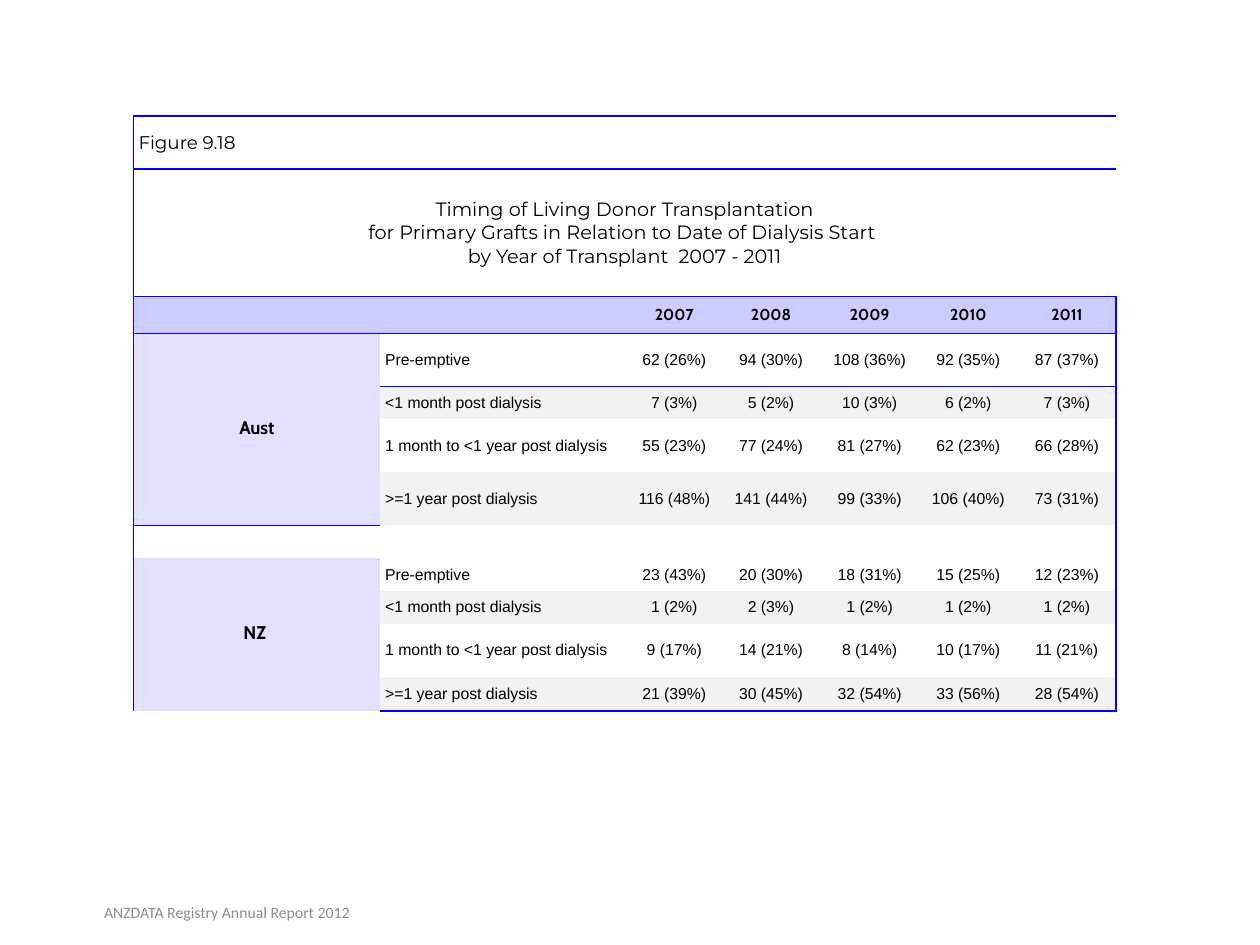
import pptx
import pptx.util
import pptx.dml.color
import pptx.enum.text
import pptx.oxml
import pptx.oxml.ns
import lxml.etree

RGB = pptx.dml.color.RGBColor
BLACK = RGB(0, 0, 0)
GRAY = RGB(0x8C, 0x8C, 0x8C)
BLUE = RGB(0, 0, 0xFF)
HEAD = RGB(0xCC, 0xCC, 0xFF)
SIDE = RGB(0xE1, 0xE1, 0xFF)
BAND = RGB(0xF2, 0xF2, 0xF2)
LEFT = pptx.enum.text.PP_ALIGN.LEFT
MID = pptx.enum.text.PP_ALIGN.CENTER
CENTER = pptx.enum.text.MSO_ANCHOR.MIDDLE
PLAIN = "{2D5ABB26-0587-4C30-8999-92F81FD0307C}"

COLS = [1.95, 1.95, 0.75, 0.78, 0.78, 0.78, 0.78]
ROWS = [0.42, 1.01, 0.29, 0.42, 0.26, 0.42, 0.42, 0.26, 0.26, 0.26, 0.42, 0.27]
YEARS = ["2007", "2008", "2009", "2010", "2011"]
TITLE = [
    "Timing of Living Donor Transplantation",
    "for Primary Grafts in Relation to Date of Dialysis Start ",
    "by Year of Transplant  2007 - 2011",
]
TIMES = [
    "Pre-emptive",
    "<1 month post dialysis",
    "1 month to <1 year post dialysis",
    ">=1 year post dialysis",
]
GROUPS = [
    ("Aust", 3, [
        ["62 (26%)", "94 (30%)", "108 (36%)", "92 (35%)", "87 (37%)"],
        ["7 (3%)", "5 (2%)", "10 (3%)", "6 (2%)", "7 (3%)"],
        ["55 (23%)", "77 (24%)", "81 (27%)", "62 (23%)", "66 (28%)"],
        ["116 (48%)", "141 (44%)", "99 (33%)", "106 (40%)", "73 (31%)"],
    ]),
    ("NZ ", 8, [
        ["23 (43%)", "20 (30%)", "18 (31%)", "15 (25%)", "12 (23%)"],
        ["1 (2%)", "2 (3%)", "1 (2%)", "1 (2%)", "1 (2%)"],
        ["9 (17%)", "14 (21%)", "8 (14%)", "10 (17%)", "11 (21%)"],
        ["21 (39%)", "30 (45%)", "32 (54%)", "33 (56%)", "28 (54%)"],
    ]),
]


def write(frame, lines, size=9, font="Arial", color=BLACK, bold=False,
          align=MID, after=None, lead=None):
    for n, line in enumerate(lines):
        para = frame.add_paragraph() if n else frame.paragraphs[0]
        para.alignment = align
        if after is not None:
            para.space_after = pptx.util.Pt(after)
        if lead is not None:
            para.line_spacing = lead
        run = para.add_run()
        run.text = line
        run.font.size = pptx.util.Pt(size)
        run.font.name = font
        run.font.bold = bold
        run.font.color.rgb = color


def border(cell, sides):
    props = cell._tc.get_or_add_tcPr()
    for side in "LRTB":
        if side not in sides:
            continue
        line = lxml.etree.SubElement(
            props, pptx.oxml.ns.qn("a:ln" + side), w=str(pptx.util.Pt(1)))
        fill = lxml.etree.SubElement(line, pptx.oxml.ns.qn("a:solidFill"))
        lxml.etree.SubElement(
            fill, pptx.oxml.ns.qn("a:srgbClr"), val=str(BLUE))


def edges(row, col):
    sides = "L" if col == 0 else ""
    if col == len(COLS) - 1:
        sides += "R"
    if row <= 3:
        sides += "T"
    if row <= 2 or row == len(ROWS) - 1:
        sides += "B"
    return sides


def shade(row, col):
    if row == 2:
        return HEAD
    for name, top, data in GROUPS:
        if top <= row < top + len(data):
            if col == 0:
                return SIDE
            return BAND if (row - top) % 2 else None
    return None


def dress(cell, row, col):
    cell.margin_left = cell.margin_right = pptx.util.Inches(0.04)
    cell.margin_top = cell.margin_bottom = pptx.util.Inches(0.04)
    cell.vertical_anchor = CENTER
    border(cell, edges(row, col))
    color = shade(row, col)
    if color is None:
        cell.fill.background()
    else:
        cell.fill.solid()
        cell.fill.fore_color.rgb = color
    if not cell.text_frame.text:
        para = cell.text_frame.paragraphs[0]
        lxml.etree.SubElement(
            para._p, pptx.oxml.ns.qn("a:endParaRPr"), sz="900")


def grid(slide, left, top, width, height):
    table = slide.shapes.add_table(
        len(ROWS), len(COLS), left, top, width, height).table
    table.first_row = table.horz_banding = False
    table._tbl.tblPr.find(pptx.oxml.ns.qn("a:tableStyleId")).text = PLAIN
    for col, share in zip(table.columns, COLS):
        col.width = int(width * share / sum(COLS))
    for row, share in zip(table.rows, ROWS):
        row.height = int(height * share / sum(ROWS))

    last = len(COLS) - 1
    for row in (0, 1):
        table.cell(row, 0).merge(table.cell(row, last))
    write(table.cell(0, 0).text_frame, ["Figure 9.18"], size=10.5,
          font="Montserrat", align=LEFT)
    write(table.cell(1, 0).text_frame, TITLE, size=11, font="Montserrat")
    for col, year in enumerate(YEARS, 2):
        write(table.cell(2, col).text_frame, [year], font="Cabin", bold=True)

    for name, start, data in GROUPS:
        side = table.cell(start, 0)
        side.merge(table.cell(start + len(data) - 1, 0))
        write(side.text_frame, [name], size=10.5, font="Cabin", bold=True,
              lead=0.75)
        for row, (time, counts) in enumerate(zip(TIMES, data), start):
            for col, text in enumerate([time] + counts, 1):
                write(table.cell(row, col).text_frame, [text], after=14,
                      align=LEFT if col == 1 else MID)

    for row in range(len(ROWS)):
        for col in range(len(COLS)):
            dress(table.cell(row, col), row, col)


def foot(slide, left, top, width, height):
    frame = slide.shapes.add_textbox(left, top, width, height).text_frame
    frame.word_wrap = True
    frame.vertical_anchor = CENTER
    write(frame, ["ANZDATA Registry Annual Report 2012"], font="Calibri",
          color=GRAY)


def main():
    deck = pptx.Presentation()
    deck.slide_width = wide = pptx.util.Inches(10)
    deck.slide_height = high = pptx.util.Inches(7.5)
    slide = deck.slides.add_slide(deck.slide_layouts[6])
    unit = pptx.util.Inches(1)
    grid(slide, int(1.06 * unit), int(0.92 * unit),
         int(wide * 0.78), int(high * 0.63))
    foot(slide, int(wide * 0.02), int(high * 0.94),
         int(wide * 0.32), int(high * 0.05))
    deck.save("out.pptx")


if __name__ == "__main__":
    main()
